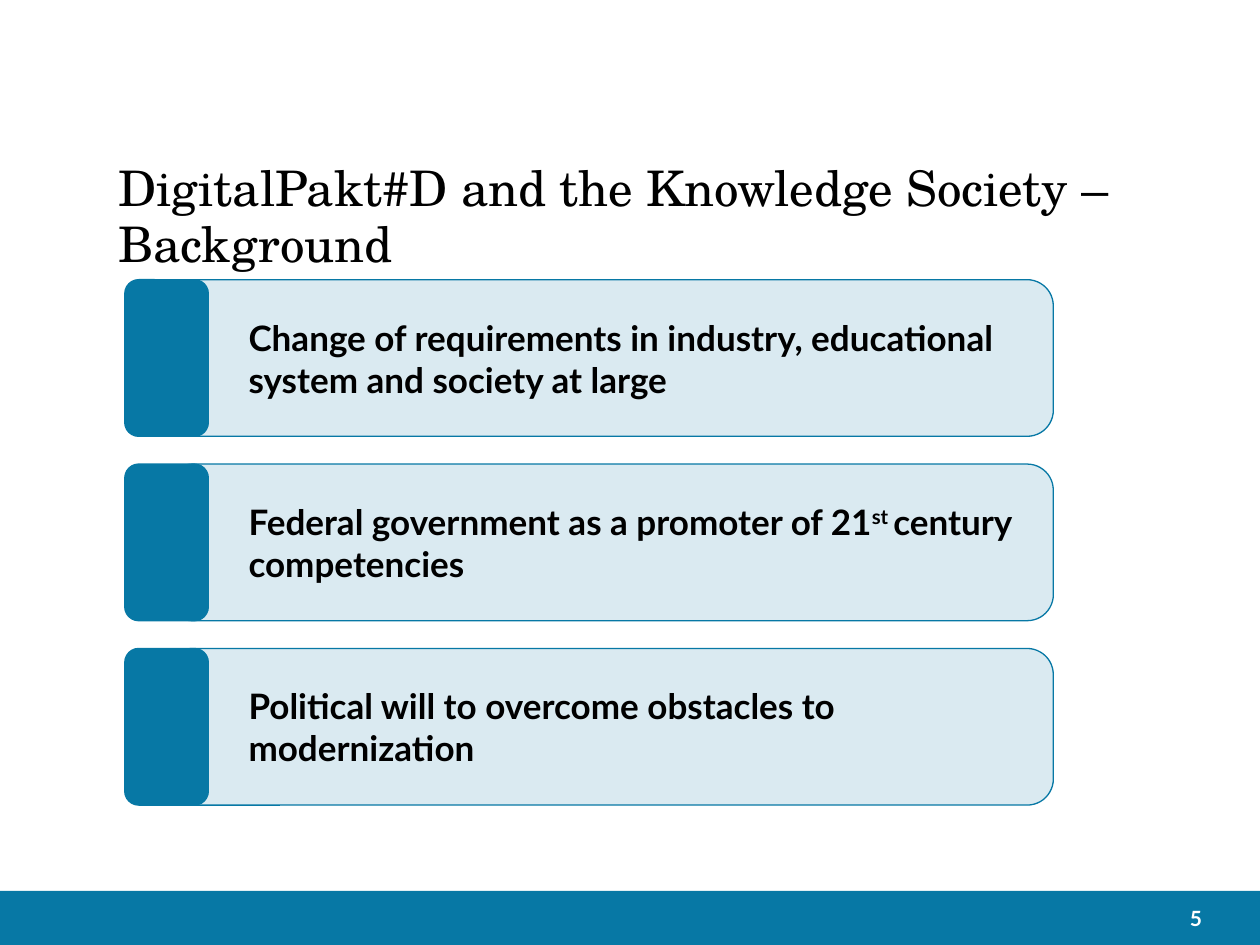
from lxml import etree
from pptx import Presentation
from pptx import util as u
from pptx.dml.color import RGBColor
from pptx.enum import shapes, text
from pptx.oxml.ns import qn

W, H = 10, 7.5
BLUE, WHITE, BLACK = "0778A5", "FFFFFF", "000000"
SANS, SERIF = "Lato", "TeX Gyre Schola"
ROUND, RECT = shapes.MSO_SHAPE.ROUNDED_RECTANGLE, shapes.MSO_SHAPE.RECTANGLE

# Each statement is a list of (text, is superscript) runs.
STATEMENTS = [
    [("Change of requirements in industry, educational system and society at large", False)],
    [("Federal government as a promoter of 21", False), ("st ", True),
     ("century competencies", False)],
    [("Political will to overcome obstacles to modernization", False)],
]


def rgb(color):
    return RGBColor.from_string(color)


def inches(box):
    return [u.Inches(v) for v in box]


def add_block(parent, kind, box, opacity=None, outlined=True):
    sp = parent.add_shape(kind, *inches(box))
    sp.shadow.inherit = False
    sp.fill.solid()
    sp.fill.fore_color.rgb = rgb(BLUE)
    if opacity is not None:
        clr = sp.fill._xPr.find(qn("a:solidFill"))[0]
        etree.SubElement(clr, qn("a:alpha")).set("val", str(opacity * 1000))
    if outlined:
        sp.line.color.rgb = rgb(BLUE)
        sp.line.width = u.Pt(0.75)
    else:
        sp.line.fill.background()
    return sp


def set_text(sp, runs, font, size, color, bold=False, align=text.PP_ALIGN.LEFT,
             anchor=text.MSO_ANCHOR.MIDDLE, indent=0):
    tf = sp.text_frame
    tf.word_wrap = True
    tf.vertical_anchor = anchor
    tf.margin_left = u.Inches(indent)
    tf.margin_top = tf.margin_right = tf.margin_bottom = 0
    p = tf.paragraphs[0]
    p.alignment = align
    for words, raised in runs:
        r = p.add_run()
        r.text = words
        if raised:
            r.font._element.set("baseline", "30000")
    p.font.name, p.font.size, p.font.bold = font, u.Pt(size), bold
    p.font.color.rgb = rgb(color)
    return p


def add_footer(s, box, number):
    left, top, width, height = box
    add_block(s.shapes, RECT, box, outlined=False)
    number_width = 0.26 * width
    number_left = left + 0.954 * width - number_width
    tb = s.shapes.add_textbox(*inches((number_left, top + 0.01, number_width, height - 0.01)))
    set_text(tb, [(number, False)], SANS, 12, WHITE, bold=True, align=text.PP_ALIGN.RIGHT)


def add_title(s, box, title):
    tb = s.shapes.add_textbox(*inches(box))
    p = set_text(tb, [(title, False)], SERIF, 28, BLACK, anchor=text.MSO_ANCHOR.TOP)
    p.line_spacing = u.Pt(32)


def add_statement(s, box, runs):
    """A solid tab whose right half lies under a pale panel with text."""
    left, top, width, height = box
    tab = 0.09 * width
    group = s.shapes.add_group_shape().shapes
    add_block(group, ROUND, (left, top, tab, height))
    panel = add_block(group, ROUND, (left + tab / 2, top, width - tab / 2, height), opacity=15)
    set_text(panel, runs, SANS, 20, BLACK, bold=True, indent=0.59)


def add_statements(s, box, statements, gap):
    left, top, width, height = box
    row = (height + gap) / len(statements)
    for i, runs in enumerate(statements):
        add_statement(s, (left, top + i * row, width, row - gap), runs)


def main():
    prs = Presentation()
    prs.slide_width, prs.slide_height = inches((W, H))
    s = prs.slides.add_slide(prs.slide_layouts[6])
    add_footer(s, (0, 7.07, W, H - 7.07), "5")
    add_title(s, (0.94, 1.27, 8.61, 0.9), "DigitalPakt#D and the Knowledge Society – Background")
    add_statements(s, (0.99, 2.22, 7.37, 4.17), STATEMENTS, gap=0.22)
    prs.save("out.pptx")


if __name__ == "__main__":
    main()
